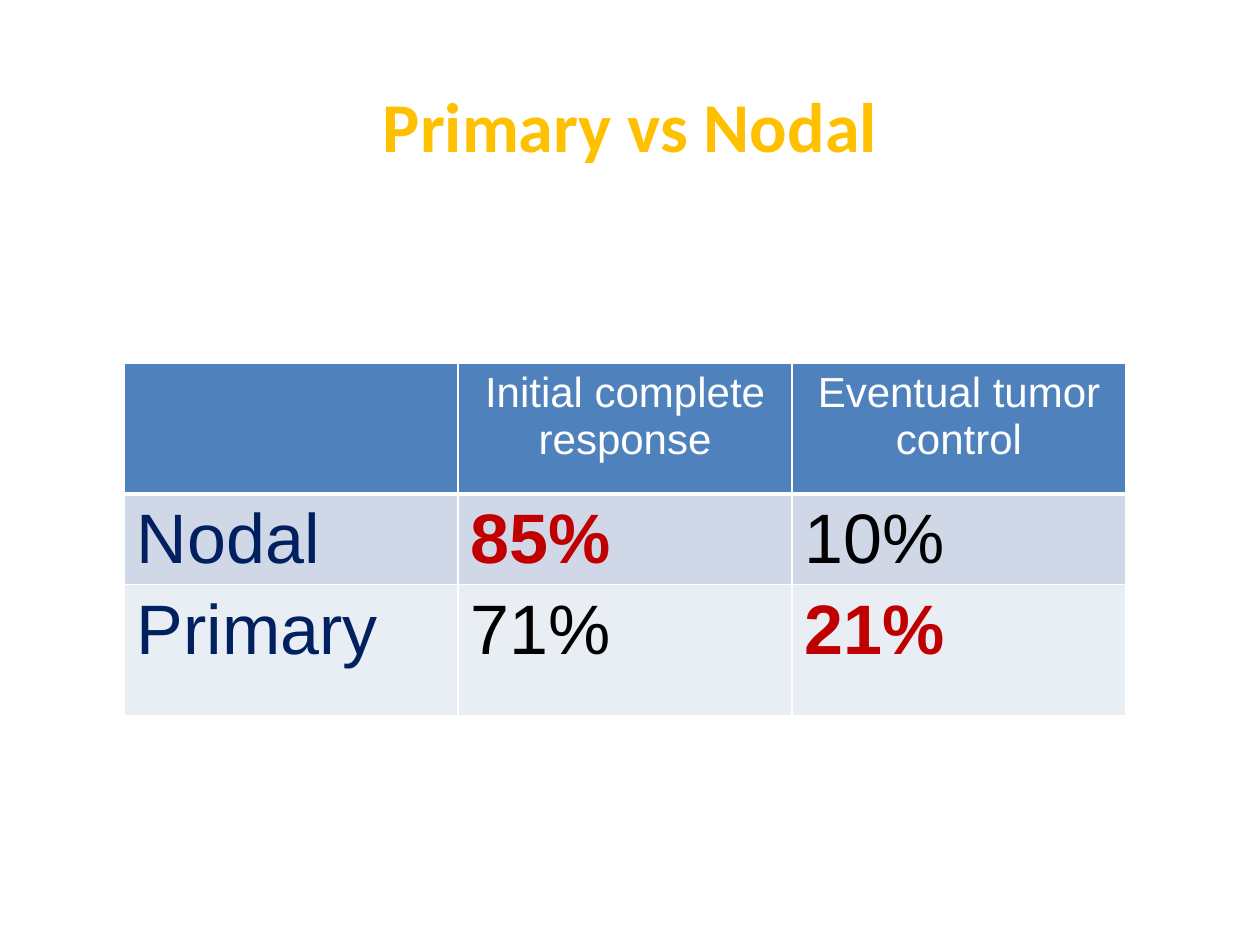
"""Build a slide comparing nodal and primary tumour response."""
from dataclasses import dataclass

from lxml import etree
from pptx import Presentation
from pptx import util as u
from pptx.dml.color import RGBColor
from pptx.enum import text
from pptx.oxml import ns


@dataclass(frozen=True)
class Theme:
    """Colours, fonts and type sizes."""
    gold: str = "FFC000"
    blue: str = "4F81BD"
    navy: str = "002060"
    red: str = "C00000"
    black: str = "000000"
    white: str = "FFFFFF"
    bands: tuple = ("D0D8E8", "E9EDF4")
    title_font: str = "Calibri"
    table_font: str = "Arial"
    large: int = 40
    header: int = 24


class SlideBuilder:
    """Hold the theme and the current page."""

    def __init__(self, deck, theme):
        """Add a title-only page to the deck."""
        self.theme = theme
        self.page = deck.slides.add_slide(deck.slide_layouts[5])

    def add_span(self, paragraph, words, font, size, color, bold=False):
        """Add one formatted span to a paragraph."""
        span = paragraph.add_run()
        span.text = words
        span.font.name = font
        span.font.size = u.Pt(size)
        span.font.bold = bold
        span.font.color.rgb = RGBColor.from_string(color)

    def title(self, words, left, top, width, height):
        """Place and fill the title placeholder."""
        box = self.page.shapes.title
        box.left, box.top, box.width, box.height = map(u.Pt, (left, top, width, height))
        frame = box.text_frame
        frame.auto_size = text.MSO_AUTO_SIZE.NONE
        frame.word_wrap = True
        frame.vertical_anchor = text.MSO_ANCHOR.BOTTOM
        frame.margin_left = frame.margin_right = 0
        frame.margin_top = frame.margin_bottom = u.Pt(1)
        paragraph = frame.paragraphs[0]
        paragraph.alignment = text.PP_ALIGN.CENTER
        self.add_span(paragraph, words, self.theme.title_font, self.theme.large,
                      self.theme.gold, True)

    def borders(self, cell, widths):
        """Draw white cell borders, given as a side-to-points mapping."""
        properties = cell._tc.get_or_add_tcPr()
        for side, points in widths.items():
            line = etree.SubElement(properties, ns.qn(f"a:ln{side}"), w=str(u.Pt(points)))
            fill = etree.SubElement(line, ns.qn("a:solidFill"))
            etree.SubElement(fill, ns.qn("a:srgbClr"), val=self.theme.white)

    def table(self, rows, highlights, left, top, column_width, row_heights):
        """Add a table with a header row, row labels and highlighted cells."""
        theme = self.theme
        columns = len(rows[0])
        grid = self.page.shapes.add_table(
            len(rows), columns, u.Pt(left), u.Pt(top),
            u.Pt(column_width * columns), u.Pt(sum(row_heights))).table
        for column in grid.columns:
            column.width = u.Pt(column_width)
        fills = (theme.blue, *theme.bands)
        for r, (values, height) in enumerate(zip(rows, row_heights)):
            grid.rows[r].height = u.Pt(height)
            for c, words in enumerate(values):
                cell = grid.cell(r, c)
                self.borders(cell, {"L": 1, "R": 1, "T": 3 if r == 1 else 1,
                                    "B": 3 if r == 0 else 1})
                cell.fill.solid()
                cell.fill.fore_color.rgb = RGBColor.from_string(fills[r])
                if not words:
                    continue
                paragraph = cell.text_frame.paragraphs[0]
                strong = (r, c) in highlights
                if r == 0:
                    paragraph.alignment = text.PP_ALIGN.CENTER
                    size, color = theme.header, theme.white
                else:
                    size = theme.large
                    color = theme.red if strong else theme.black if c else theme.navy
                self.add_span(paragraph, words, theme.table_font, size, color, strong)


def main():
    """Create and save the deck."""
    deck = Presentation()
    deck.slide_width, deck.slide_height = u.Pt(720), u.Pt(540)
    builder = SlideBuilder(deck, Theme())
    builder.title("Primary vs Nodal", 36, 21, 648, 75)
    builder.table(
        [("", "Initial complete response", "Eventual tumor control"),
         ("Nodal", "85%", "10%"),
         ("Primary", "71%", "21%")],
        highlights={(1, 1), (2, 2)}, left=71, top=207.5,
        column_width=190.8, row_heights=(74.7, 43.2, 74.7))
    deck.save("out.pptx")


if __name__ == "__main__":
    main()
